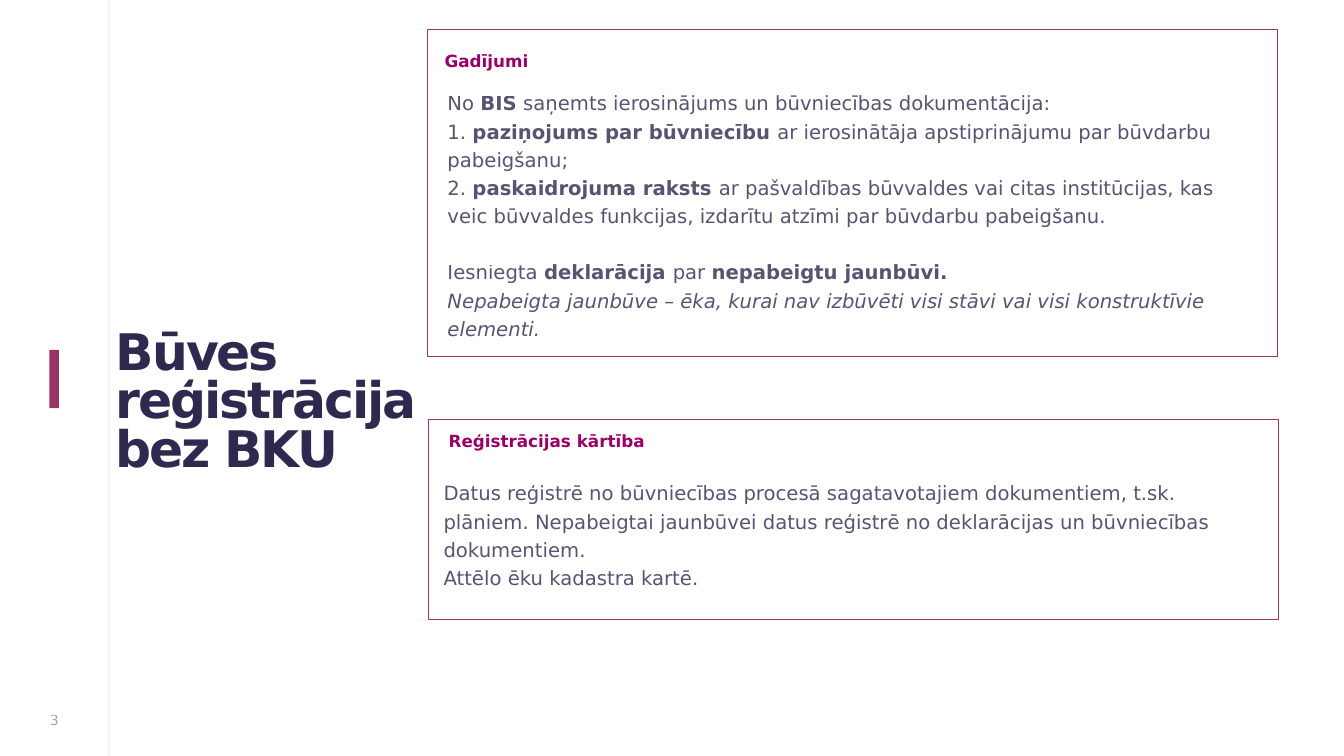
import pptx
import pptx.dml.color
import pptx.enum.shapes
import pptx.enum.text
import pptx.oxml.ns
import pptx.util
from lxml import etree

WIDTH = pptx.util.Inches(13.333)
HEIGHT = pptx.util.Inches(7.5)
FONT = "DejaVu Sans"
COLORS = {"ink": "2E294E", "accent": "993366", "heading": "990066", "number": "808080"}

# Paragraphs are lists of (text, style) runs; style is "", "b" or "i"
CASES = [
    [("No ", ""), ("BIS", "b"), (" saņemts ierosinājums un būvniecības dokumentācija:", "")],
    [("1. ", ""), ("paziņojums par būvniecību ", "b"),
     ("ar ierosinātāja apstiprinājumu par būvdarbu pabeigšanu;", "")],
    [("2. ", ""), ("paskaidrojuma raksts ", "b"),
     ("ar pašvaldības būvvaldes vai citas institūcijas, kas veic būvvaldes funkcijas, "
      "izdarītu atzīmi par būvdarbu pabeigšanu.", "")],
    [("Iesniegta ", ""), ("deklarācija ", "b"), ("par ", ""), ("nepabeigtu jaunbūvi.", "b")],
    [("Nepabeigta jaunbūve – ēka, kurai nav izbūvēti visi stāvi vai visi "
      "konstruktīvie elementi.", "i")],
]
PROCEDURE = [
    [("Datus reģistrē no būvniecības procesā sagatavotajiem dokumentiem, t.sk. plāniem. "
      "Nepabeigtai jaunbūvei datus reģistrē no deklarācijas un būvniecības dokumentiem.", "")],
    [("Attēlo ēku kadastra kartē.", "")],
]


def place(left, top, width, height):
    """Turn percentages of the slide into lengths."""
    return (int(WIDTH * left / 100), int(HEIGHT * top / 100),
            int(WIDTH * width / 100), int(HEIGHT * height / 100))


def rgb(name):
    return pptx.dml.color.RGBColor.from_string(COLORS[name])


def set_opacity(properties, percent):
    """Add an alpha value to the solid colour inside the given properties."""
    color = properties.find(".//" + pptx.oxml.ns.qn("a:srgbClr"))
    etree.SubElement(color, pptx.oxml.ns.qn("a:alpha")).set("val", str(percent * 1000))


def add_rectangle(slide, area, fill=None, line=None):
    shape = slide.shapes.add_shape(pptx.enum.shapes.MSO_SHAPE.RECTANGLE, *place(*area))
    shape.shadow.inherit = False
    if fill:
        shape.fill.solid()
        shape.fill.fore_color.rgb = rgb(fill)
    else:
        shape.fill.background()
    if line:
        shape.line.color.rgb = rgb(line)
        shape.line.width = pptx.util.Pt(0.5)
    else:
        shape.line.fill.background()


def add_margin_line(slide, left):
    x, top, _, height = place(left, 0, 0, 100)
    line = slide.shapes.add_connector(
        pptx.enum.shapes.MSO_CONNECTOR.STRAIGHT, x, top, x, height)
    line.line.color.rgb = rgb("ink")
    line.line.width = pptx.util.Pt(0.5)
    properties = line._element.spPr
    set_opacity(properties, 20)
    etree.SubElement(properties, pptx.oxml.ns.qn("a:effectLst"))


def add_text(slide, area, paragraphs, size, color, opacity=100, spacing=1.0, tracking=0,
             inset_top=0.05, inset_bottom=0.05, grow=False, gap_before=None,
             align=pptx.enum.text.PP_ALIGN.LEFT, anchor=pptx.enum.text.MSO_ANCHOR.TOP):
    """Write paragraphs of runs; gap_before is the index of a paragraph set one line lower."""
    frame = slide.shapes.add_textbox(*place(*area)).text_frame
    frame.word_wrap = True
    frame.vertical_anchor = anchor
    frame.margin_left = frame.margin_right = 0
    frame.margin_top = pptx.util.Inches(inset_top)
    frame.margin_bottom = pptx.util.Inches(inset_bottom)
    if grow:
        frame.auto_size = pptx.enum.text.MSO_AUTO_SIZE.SHAPE_TO_FIT_TEXT
    for index, runs in enumerate(paragraphs):
        paragraph = frame.add_paragraph() if index else frame.paragraphs[0]
        paragraph.alignment = align
        paragraph.line_spacing = spacing
        if index == gap_before:
            paragraph.space_before = pptx.util.Pt(20)
        for text, style in runs:
            run = paragraph.add_run()
            run.text = text
            run.font.name = FONT
            run.font.size = pptx.util.Pt(size)
            run.font.bold = style == "b"
            run.font.italic = style == "i"
            run.font.color.rgb = rgb(color)
            properties = run._r.get_or_add_rPr()
            if opacity < 100:
                set_opacity(properties, opacity)
            if tracking:
                properties.set("spc", str(int(tracking * 100)))


def add_panel(slide, box, heading_area, heading, body_area, body, gap_before=None):
    add_rectangle(slide, box, line="accent")
    add_text(slide, heading_area, [[(heading, "b")]], 12, "heading", spacing=0.7, grow=True)
    add_text(slide, body_area, body, 14, "ink", opacity=80, spacing=1.2, grow=True,
             gap_before=gap_before)


def main():
    presentation = pptx.Presentation()
    presentation.slide_width, presentation.slide_height = WIDTH, HEIGHT
    slide = presentation.slides.add_slide(presentation.slide_layouts[6])

    # Left margin
    add_margin_line(slide, 8.1)
    add_rectangle(slide, (3.68, 46.27, 0.7, 7.73), fill="accent")
    add_text(slide, (1.95, 93.6, 4.2, 3.33), [[("3", "")]], 10, "number", opacity=70,
             inset_top=0, inset_bottom=0, align=pptx.enum.text.PP_ALIGN.CENTER,
             anchor=pptx.enum.text.MSO_ANCHOR.MIDDLE)

    # Title
    add_text(slide, (8.63, 41.07, 22.73, 23.6), [[("Būves reģistrācija bez BKU", "b")]],
             36, "ink", spacing=0.8, tracking=-1.5, inset_top=0.21, inset_bottom=0)

    # Panels
    add_panel(slide, (31.8, 3.87, 63.23, 43.33),
              (33.08, 6.8, 61.43, 3.2), "Gadījumi",
              (33.3, 10.8, 60.45, 34.93), CASES, gap_before=3)
    add_panel(slide, (31.88, 55.47, 63.23, 26.4),
              (33.38, 57.07, 60.75, 3.2), "Reģistrācijas kārtība",
              (33, 62.4, 59.33, 19.33), PROCEDURE)

    presentation.save("out.pptx")


if __name__ == "__main__":
    main()
